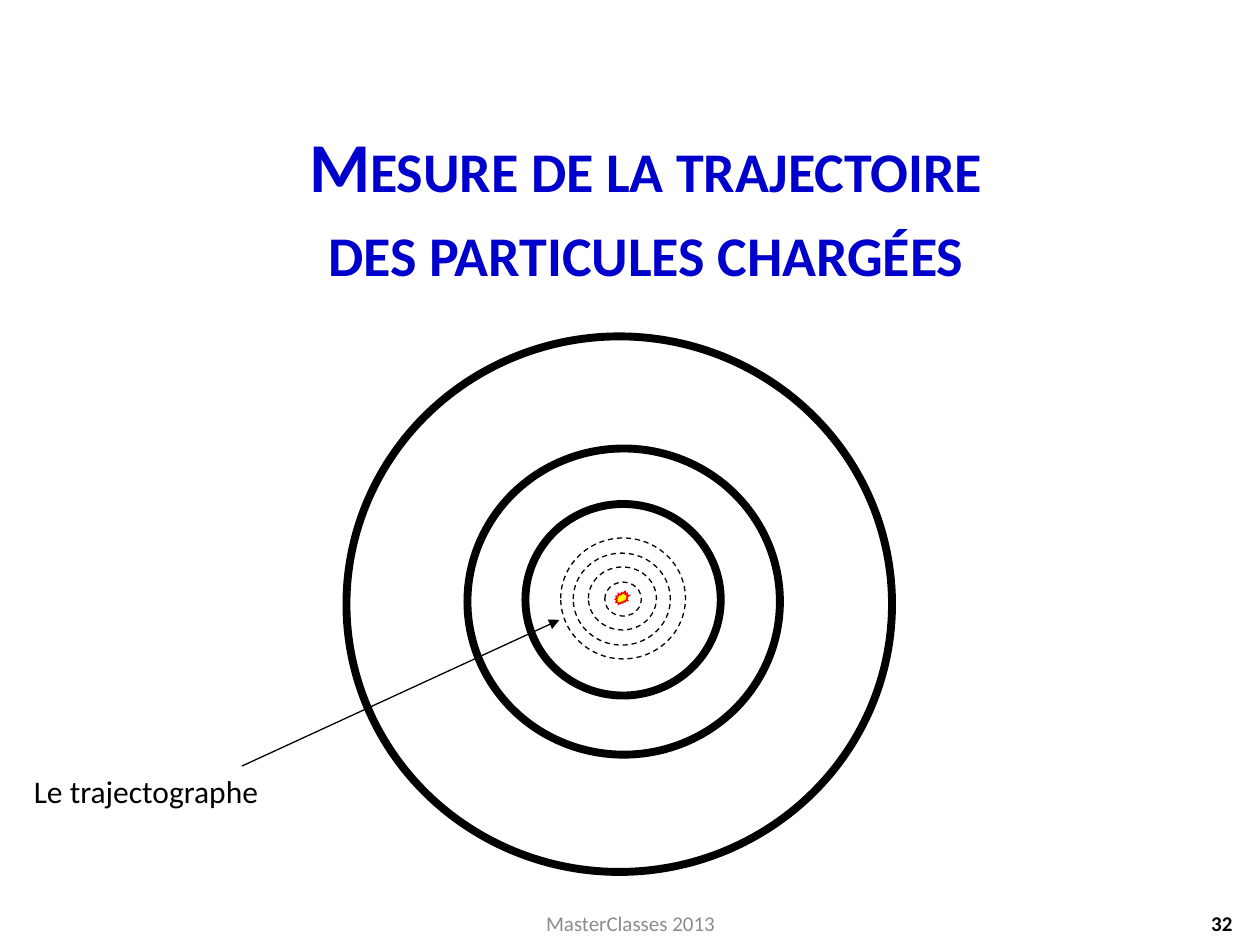
from lxml import etree
from pptx import Presentation
from pptx.dml.color import RGBColor
from pptx.enum.dml import MSO_LINE
from pptx.enum.shapes import MSO_CONNECTOR, MSO_SHAPE
from pptx.enum.text import MSO_ANCHOR, PP_ALIGN
from pptx.oxml.ns import qn
from pptx.util import Inches, Pt

LEFT, CENTER, RIGHT = PP_ALIGN.LEFT, PP_ALIGN.CENTER, PP_ALIGN.RIGHT
TOP, MIDDLE = MSO_ANCHOR.TOP, MSO_ANCHOR.MIDDLE
OVAL, BURST = MSO_SHAPE.OVAL, MSO_SHAPE.EXPLOSION2
DASH = MSO_LINE.DASH
STRAIGHT = MSO_CONNECTOR.STRAIGHT

BLACK, WHITE = "000000", "FFFFFF"
# left, top, width, height, from the outside in
LAYERS = [
    (2.75, 2.67, 4.33, 4.25),
    (3.71, 3.56, 2.48, 2.43),
    (4.17, 4, 1.55, 1.52),
]
TRACKS = [
    (4.8, 4.62, 0.29, 0.27),
    (4.67, 4.5, 0.54, 0.5),
    (4.55, 4.39, 0.77, 0.73),
    (4.45, 4.27, 0.99, 0.96),
]


def color(code):
    return RGBColor.from_string(code)


def inches(values):
    return [Inches(value) for value in values]


def write(shape, text, size=18, ink=BLACK, bold=False, align=LEFT,
          anchor=TOP, small=False):
    """Fill a shape with one paragraph; a line feed breaks the line."""
    frame = shape.text_frame
    frame.word_wrap = True
    frame.vertical_anchor = anchor
    para = frame.paragraphs[0]
    para.alignment = align
    for index, line in enumerate(text.split("\n")):
        if index:
            para.add_line_break()
        run = para.add_run()
        run.text = line
        font = run.font
        font.name, font.size, font.bold = "Calibri", Pt(size), bold
        font.color.rgb = color(ink)
        if small:
            run._r.get_or_add_rPr().set("cap", "small")


def add_title(slide, box, text, **style):
    title = slide.shapes.title
    title.left, title.top, title.width, title.height = inches(box)
    write(title, text, **style)


def add_text(slide, box, text, **style):
    write(slide.shapes.add_textbox(*inches(box)), text, **style)


def add_form(shapes, kind, box, fill=None, line=BLACK, width=0.75, dash=None):
    form = shapes.add_shape(kind, *inches(box))
    form.shadow.inherit = False
    if fill:
        form.fill.solid()
        form.fill.fore_color.rgb = color(fill)
    else:
        form.fill.background()
    form.line.color.rgb = color(line)
    form.line.width = Pt(width)
    if dash:
        form.line.dash_style = dash


def add_arrow(slide, start, end):
    arrow = slide.shapes.add_connector(STRAIGHT, *inches(start + end))
    arrow.line.color.rgb = color(BLACK)
    arrow.line.width = Pt(0.75)
    etree.SubElement(arrow.line._get_or_add_ln(), qn("a:tailEnd"),
                     type="triangle")
    etree.SubElement(arrow._element.spPr, qn("a:effectLst"))


def add_tracker(slide):
    """Group the collision point with the dashed tracker rings."""
    shapes = slide.shapes.add_group_shape().shapes
    add_form(shapes, BURST, (4.88, 4.69, 0.12, 0.11), "FFFF00", "FF0000")
    for box in TRACKS:
        add_form(shapes, OVAL, box, dash=DASH)


def main():
    deck = Presentation()
    deck.slide_width, deck.slide_height = Inches(10), Inches(7.5)
    slide = deck.slides.add_slide(deck.slide_layouts.get_by_name("Title Only"))

    add_title(slide, (1.17, 0.92, 7.91, 1.43),
              "Mesure de la trajectoire\ndes particules chargées",
              size=40, ink="0000CC", bold=True, align=CENTER,
              anchor=MIDDLE, small=True)
    add_text(slide, (7.55, 7.13, 2.33, 0.4), "32", size=12, bold=True,
             align=RIGHT, anchor=MIDDLE)
    for box in LAYERS:
        add_form(slide.shapes, OVAL, box, WHITE, width=4.5)
    add_arrow(slide, (1.92, 6.08), (4.44, 4.92))
    add_text(slide, (0.17, 6.08, 2.67, 0.43), "Le trajectographe")
    add_tracker(slide)
    add_text(slide, (3.42, 7.13, 3.17, 0.4), "MasterClasses 2013", size=12,
             ink="8C8C8C", align=CENTER, anchor=MIDDLE)

    deck.save("out.pptx")


if __name__ == "__main__":
    main()
